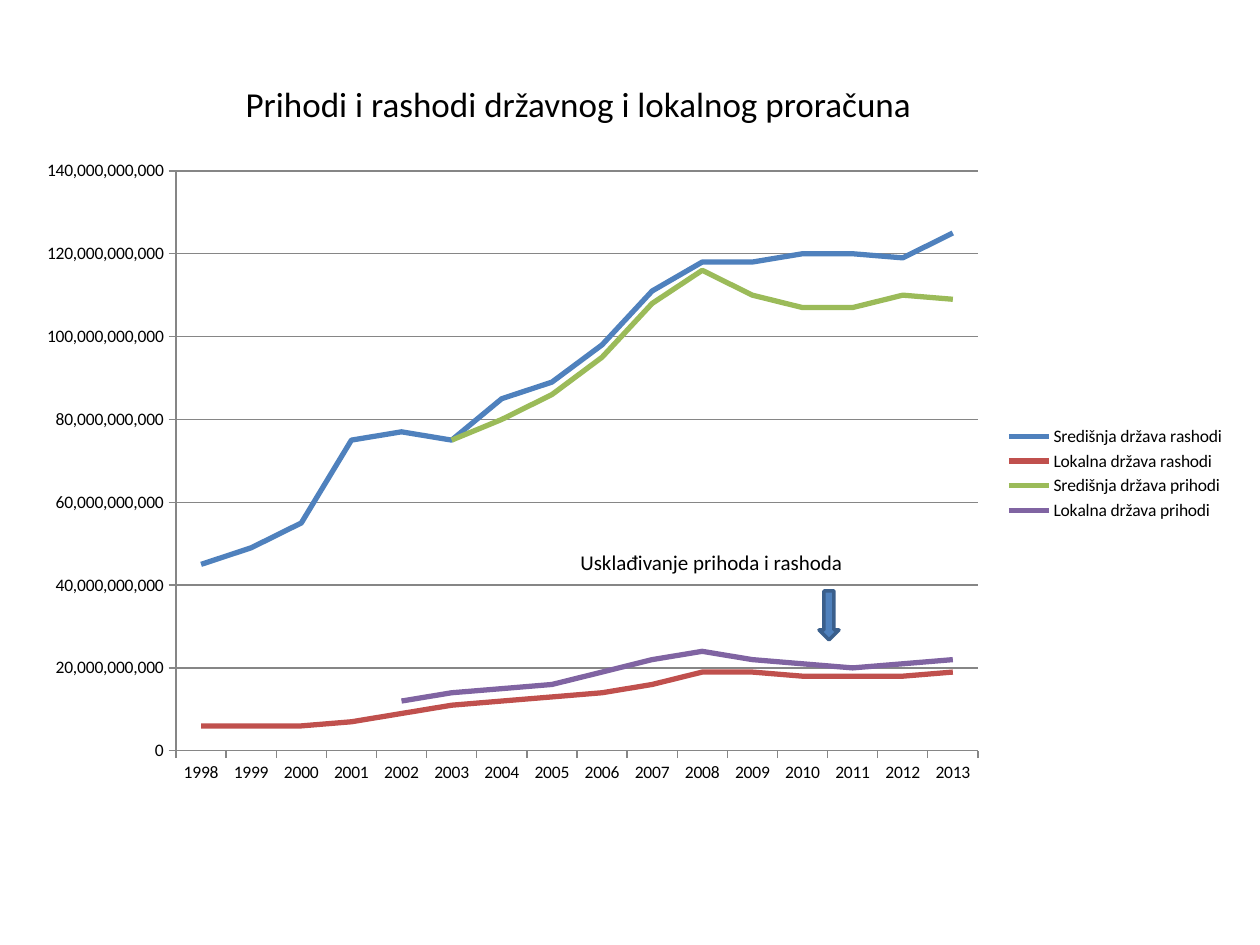
from dataclasses import dataclass

from lxml import etree
from pptx import Presentation
from pptx import util as u
from pptx.chart.data import CategoryChartData
from pptx.dml.color import RGBColor
from pptx.enum import chart as charts, shapes, text
from pptx.oxml import parse_xml
from pptx.oxml.ns import nsdecls, qn


@dataclass
class Theme:
    font: str = "Calibri"
    ink: RGBColor = RGBColor.from_string("000000")
    grid: RGBColor = RGBColor.from_string("868686")
    arrow_fill: RGBColor = RGBColor.from_string("4F81BD")
    arrow_line: RGBColor = RGBColor.from_string("3A5F8C")
    title_size: int = 20
    note_size: int = 12
    chart_size: int = 10


theme = Theme()
BILLION = 10**9
CHART_BOX = (23, 149, 1215, 649)
PLOT_BOX = (176, 171, 802, 580)


def px(value):
    return u.Inches(value / 126)


def write_line(shape, words, size, alignment):
    frame = shape.text_frame
    frame.word_wrap = False
    frame.auto_size = text.MSO_AUTO_SIZE.SHAPE_TO_FIT_TEXT
    frame.vertical_anchor = text.MSO_ANCHOR.TOP
    paragraph = frame.paragraphs[0]
    paragraph.alignment = alignment
    run = paragraph.add_run()
    run.text = words
    run.font.name = theme.font
    run.font.size = u.Pt(size)
    run.font.color.rgb = theme.ink


presentation = Presentation()
presentation.slide_width = px(1260)
presentation.slide_height = px(945)
slide = presentation.slides.add_slide(presentation.slide_layouts[5])

series_table = [
    ("Središnja država rashodi", "4F81BD",
     [45, 49, 55, 75, 77, 75, 85, 89, 98, 111, 118, 118, 120, 120, 119, 125]),
    ("Lokalna država rashodi", "C0504D",
     [6, 6, 6, 7, 9, 11, 12, 13, 14, 16, 19, 19, 18, 18, 18, 19]),
    ("Središnja država prihodi", "9BBB59",
     [None] * 5 + [75, 80, 86, 95, 108, 116, 110, 107, 107, 110, 109]),
    ("Lokalna država prihodi", "8064A2",
     [None] * 4 + [12, 14, 15, 16, 19, 22, 24, 22, 21, 20, 21, 22]),
]
chart_data = CategoryChartData(number_format="#,##0")
chart_data.categories = [str(year) for year in range(1998, 2014)]
for name, color, values in series_table:
    chart_data.add_series(
        name, [None if value is None else value * BILLION for value in values])

chart = slide.shapes.add_chart(
    charts.XL_CHART_TYPE.LINE, *map(px, CHART_BOX), chart_data).chart
chart.has_title = False
chart.font.name = theme.font
chart.font.size = u.Pt(theme.chart_size)
chart.font.color.rgb = theme.ink
chart.has_legend = True
chart.legend.position = charts.XL_LEGEND_POSITION.RIGHT
chart.legend.include_in_layout = False
chart.plots[0].vary_by_categories = False

for series, (name, color, values) in zip(chart.plots[0].series, series_table):
    series.smooth = False
    series.marker.style = charts.XL_MARKER_STYLE.NONE
    series.format.line.width = u.Pt(3)
    series.format.line.color.rgb = RGBColor.from_string(color)

value_axis = chart.value_axis
value_axis.minimum_scale = 0
value_axis.maximum_scale = 140 * BILLION
value_axis.major_unit = 20 * BILLION
value_axis.has_major_gridlines = True
value_axis.tick_labels.number_format = "#,##0"
value_axis.tick_labels.number_format_is_linked = False
for axis in (value_axis, chart.category_axis):
    axis.major_tick_mark = charts.XL_TICK_MARK.OUTSIDE
    axis.minor_tick_mark = charts.XL_TICK_MARK.NONE
for lined in (value_axis, chart.category_axis, value_axis.major_gridlines):
    lined.format.line.width = u.Pt(0.75)
    lined.format.line.color.rgb = theme.grid

fractions = {
    "x": (PLOT_BOX[0] - CHART_BOX[0]) / CHART_BOX[2],
    "y": (PLOT_BOX[1] - CHART_BOX[1]) / CHART_BOX[3],
    "w": PLOT_BOX[2] / CHART_BOX[2],
    "h": PLOT_BOX[3] / CHART_BOX[3],
}
layout = parse_xml(f"<c:layout {nsdecls('c')}><c:manualLayout/></c:layout>")
settings = [("layoutTarget", "inner"), ("xMode", "edge"), ("yMode", "edge")]
for tag, value in settings + list(fractions.items()):
    etree.SubElement(layout[0], qn(f"c:{tag}")).set("val", str(value))
plot_area = chart.element.find(".//" + qn("c:plotArea"))
for old_layout in plot_area.findall(qn("c:layout")):
    plot_area.remove(old_layout)
plot_area.insert(0, layout)

arrow = slide.shapes.add_shape(
    shapes.MSO_SHAPE.DOWN_ARROW, px(819), px(591), px(20), px(49))
arrow.shadow.inherit = False
arrow.fill.solid()
arrow.fill.fore_color.rgb = theme.arrow_fill
arrow.line.color.rgb = theme.arrow_line
arrow.line.width = u.Pt(2)

note = slide.shapes.add_textbox(px(568), px(543), px(290), px(38))
write_line(note, "Usklađivanje prihoda i rashoda",
           theme.note_size, text.PP_ALIGN.LEFT)

title = slide.shapes.title
title.left, title.top, title.width, title.height = map(px, (233, 76, 697, 55))
write_line(title, "Prihodi i rashodi državnog i lokalnog proračuna",
           theme.title_size, text.PP_ALIGN.LEFT)

presentation.save("out.pptx")
